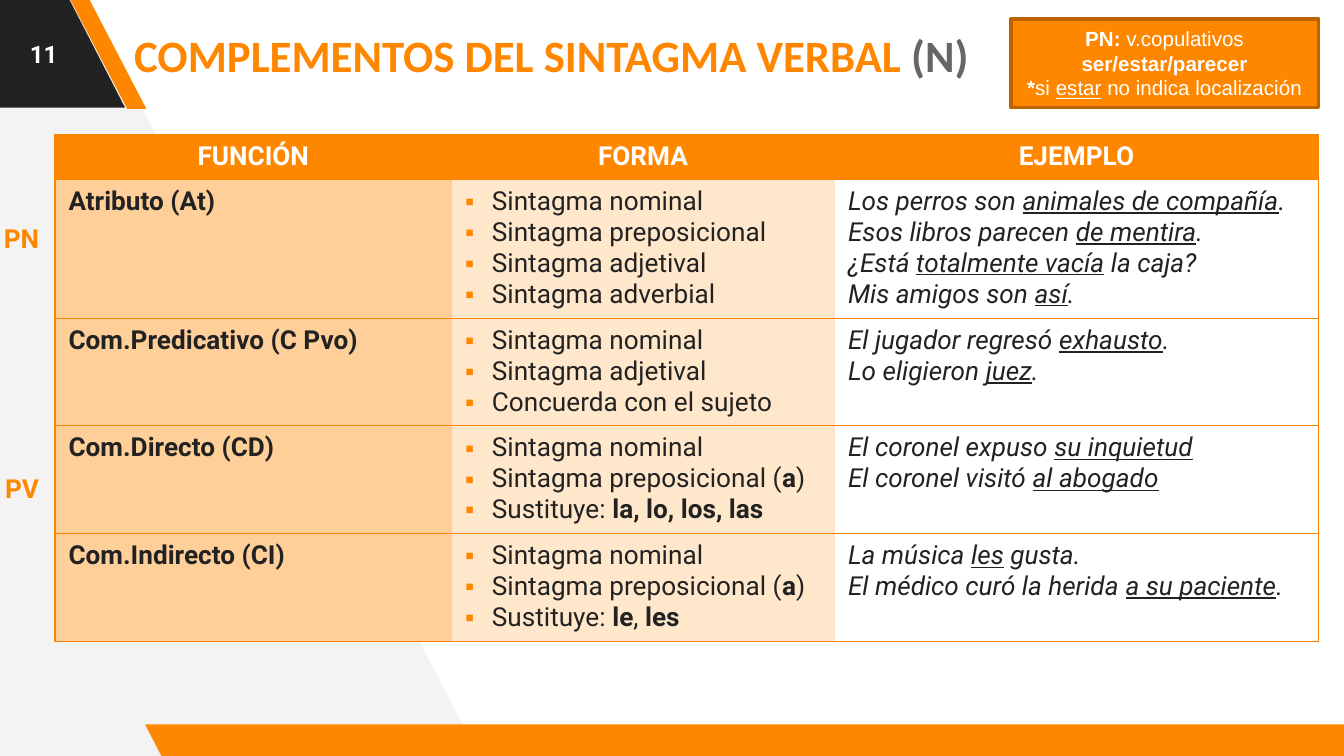
from lxml import etree
from pptx import Presentation
from pptx.dml.color import RGBColor
from pptx.enum.shapes import MSO_SHAPE
from pptx.enum.text import MSO_ANCHOR, PP_ALIGN
from pptx.oxml.ns import qn
from pptx.util import Inches, Pt

ORANGE = RGBColor(0xFF, 0x87, 0x00)
BORDER = RGBColor(0xF9, 0x84, 0x00)
BROWN = RGBColor(0xBD, 0x64, 0x00)
PEACH = RGBColor(0xFF, 0xCF, 0x99)
CREAM = RGBColor(0xFF, 0xE7, 0xCC)
WHITE = RGBColor(0xFF, 0xFF, 0xFF)
PALE = RGBColor(0xF3, 0xF3, 0xF3)
GRAY = RGBColor(0x66, 0x66, 0x66)
BLACK = RGBColor(0x22, 0x22, 0x22)

HEADERS = ["FUNCIÓN", "FORMA", "EJEMPLO"]
COL_WIDTHS = [2.95, 2.85, 3.6]
MIN_ROW_HEIGHT = 0.3  # rows grow to fit their text
# Underscores enclose the emphasised words: bold in FORMA, underlined in EJEMPLO.
ROWS = [
    ("Atributo (At)",
     ["Sintagma nominal", "Sintagma preposicional", "Sintagma adjetival", "Sintagma adverbial"],
     ["Los perros son _animales de compañía_.", "Esos libros parecen _de mentira_.",
      "¿Está _totalmente vacía_ la caja?", "Mis amigos son _así_."]),
    ("Com.Predicativo (C Pvo)",
     ["Sintagma nominal", "Sintagma adjetival", "Concuerda con el sujeto"],
     ["El jugador regresó _exhausto_.", "Lo eligieron _juez_."]),
    ("Com.Directo (CD)",
     ["Sintagma nominal", "Sintagma preposicional (_a_)", "Sustituye: _la, lo, los, las_"],
     ["El coronel expuso _su inquietud_", "El coronel visitó _al abogado_"]),
    ("Com.Indirecto (CI)",
     ["Sintagma nominal", "Sintagma preposicional (_a_)", "Sustituye: _le_, _les_"],
     ["La música _les_ gusta.", "El médico curó la herida _a su paciente_."]),
]
CALLOUT = [("PN:", " v.copulativos"), ("ser/estar/parecer", ""),
           ("*", "si _estar_ no indica localización")]


def set_font(font, name, size, color, bold=False, italic=False):
    font.name, font.size = name, Pt(size)
    font.color.rgb = color
    font.bold, font.italic = bold, italic


def add_runs(p, text, emphasis):
    """Add text, setting the emphasis attribute on parts between underscores."""
    for i, part in enumerate(text.split("_")):
        if part:
            r = p.add_run()
            r.text = part
            if i % 2:
                setattr(r.font, emphasis, True)


def paragraphs(tf, count):
    return [tf.paragraphs[0]] + [tf.add_paragraph() for _ in range(count - 1)]


def paint(sp, fill):
    sp.shadow.inherit = False
    sp.fill.solid()
    sp.fill.fore_color.rgb = fill
    sp.line.fill.background()


def add_slant(slide, box, fill, slant):
    """Add a parallelogram leaning to the left."""
    sp = slide.shapes.add_shape(MSO_SHAPE.PARALLELOGRAM, *map(Inches, box))
    sp.adjustments[0] = slant
    sp._element.spPr.find(qn("a:xfrm")).set("flipH", "1")
    paint(sp, fill)


def add_background(slide, left, top, width, height):
    points = [(3.62, 5.66), (0.68, 0), (0, 0), (0.04, 5.7)]
    points = [(Inches(left + x), Inches(top + y)) for x, y in points]
    builder = slide.shapes.build_freeform(*points[0])
    builder.add_line_segments(points[1:], close=True)
    paint(builder.convert_to_shape(), PALE)
    add_slant(slide, (left - 0.93, top + 0.02, 1.92, 0.82), BLACK, 0.515)
    add_slant(slide, (left + 0.58, top + 0.03, 0.57, 0.82), ORANGE, 0.75)
    add_slant(slide, (left + 1.14, top + height - 0.27, 9.15, 0.25), ORANGE, 0.515)


def add_label(slide, box, text, size, color, font="Roboto", wrap=True, margin=0.05):
    tf = slide.shapes.add_textbox(*map(Inches, box)).text_frame
    tf.word_wrap = wrap
    tf.margin_top = tf.margin_bottom = Inches(margin)
    tf.vertical_anchor = MSO_ANCHOR.MIDDLE
    p = tf.paragraphs[0]
    p.add_run().text = text
    set_font(p.font, font, size, color, bold=True)
    return p


def add_header(slide, left, top, width, height):
    number = add_label(slide, (left, top, 0.65, 0.8), "11", 13, WHITE, margin=0.1)
    number.alignment = PP_ALIGN.CENTER
    title = add_label(slide, (left + 0.9, top + 0.08, width - 0.9, height - 0.15),
                      "COMPLEMENTOS DEL SINTAGMA VERBAL ", 24, ORANGE, "Calibri", margin=0.1)
    r = title.add_run()
    r.text = "(N)"
    r.font.color.rgb = GRAY


def add_bullet(p):
    pPr = p._p.get_or_add_pPr()
    pPr.set("marL", str(Inches(0.2)))
    pPr.set("indent", str(Inches(-0.2)))
    color = etree.Element(qn("a:buClr"))
    etree.SubElement(color, qn("a:srgbClr")).set("val", str(ORANGE))
    font = etree.Element(qn("a:buFont"))
    font.set("typeface", "Arial")
    char = etree.Element(qn("a:buChar"))
    char.set("char", "▪")
    for i, part in enumerate((color, font, char)):
        pPr.insert(i, part)


def set_borders(cell, visible):
    """Draw the sides named in visible (of L, R, T, B) and hide the others."""
    tcPr = cell._tc.get_or_add_tcPr()
    for i, side in enumerate("LRTB"):
        ln = etree.Element(qn("a:ln" + side))
        ln.set("w", str(Pt(0.75)))
        if side in visible:
            fill = etree.SubElement(ln, qn("a:solidFill"))
            etree.SubElement(fill, qn("a:srgbClr")).set("val", str(BORDER))
        else:
            etree.SubElement(ln, qn("a:noFill"))
        tcPr.insert(i, ln)


def fill_cell(cell, lines, col, is_header):
    cell.fill.solid()
    cell.fill.fore_color.rgb = ORANGE if is_header else (PEACH, CREAM, WHITE)[col]
    set_borders(cell, "TB" + ("L", "", "R")[col])
    for p, line in zip(paragraphs(cell.text_frame, len(lines)), lines):
        add_runs(p, line, "bold" if col == 1 else "underline")
        set_font(p.font, "Roboto", 14, WHITE if is_header else BLACK,
                 bold=is_header or col == 0, italic=not is_header and col == 2)
        if is_header:
            p.alignment = PP_ALIGN.CENTER
        elif col == 1:
            add_bullet(p)


def add_function_table(slide, left, top, width, height):
    frame = slide.shapes.add_table(len(ROWS) + 1, len(HEADERS),
                                   *map(Inches, (left, top, width, height)))
    table = frame.table
    table.horz_banding = False
    for column, column_width in zip(table.columns, COL_WIDTHS):
        column.width = Inches(column_width)
    for row in table.rows:
        row.height = Inches(MIN_ROW_HEIGHT)
    frame.height = Inches(height)
    contents = [[[h] for h in HEADERS]] + [[[name], forms, examples] for name, forms, examples in ROWS]
    for i, row in enumerate(contents):
        for j, lines in enumerate(row):
            fill_cell(table.cell(i, j), lines, j, i == 0)


def add_callout(slide, left, top, width, height):
    sp = slide.shapes.add_shape(MSO_SHAPE.RECTANGLE, *map(Inches, (left, top, width, height)))
    paint(sp, ORANGE)
    sp.line.color.rgb = BROWN
    sp.line.width = Pt(2)
    tf = sp.text_frame
    tf.word_wrap = True
    tf.vertical_anchor = MSO_ANCHOR.MIDDLE
    for p, (lead, rest) in zip(paragraphs(tf, len(CALLOUT)), CALLOUT):
        r = p.add_run()
        r.text = lead
        r.font.bold = True
        add_runs(p, rest, "underline")
        set_font(p.font, "Arial", 11, WHITE)
        p.alignment = PP_ALIGN.CENTER


def main():
    prs = Presentation()
    prs.slide_width, prs.slide_height = Inches(10), Inches(10 * 9 / 16)
    slide = prs.slides.add_slide(prs.slide_layouts[6])
    add_background(slide, -0.06, -0.04, 3.62, 5.7)
    add_header(slide, 0, 0, 10, 0.8)
    add_function_table(slide, 0.41, 1, 9.4, 3.77)
    add_label(slide, (-0.07, 1.6, 0.48, 0.34), "PN", 14, ORANGE, wrap=False)
    add_label(slide, (-0.06, 3.46, 0.46, 0.34), "PV", 14, ORANGE, wrap=False)
    add_callout(slide, 7.52, 0.14, 2.29, 0.66)
    prs.save("out.pptx")


if __name__ == "__main__":
    main()
